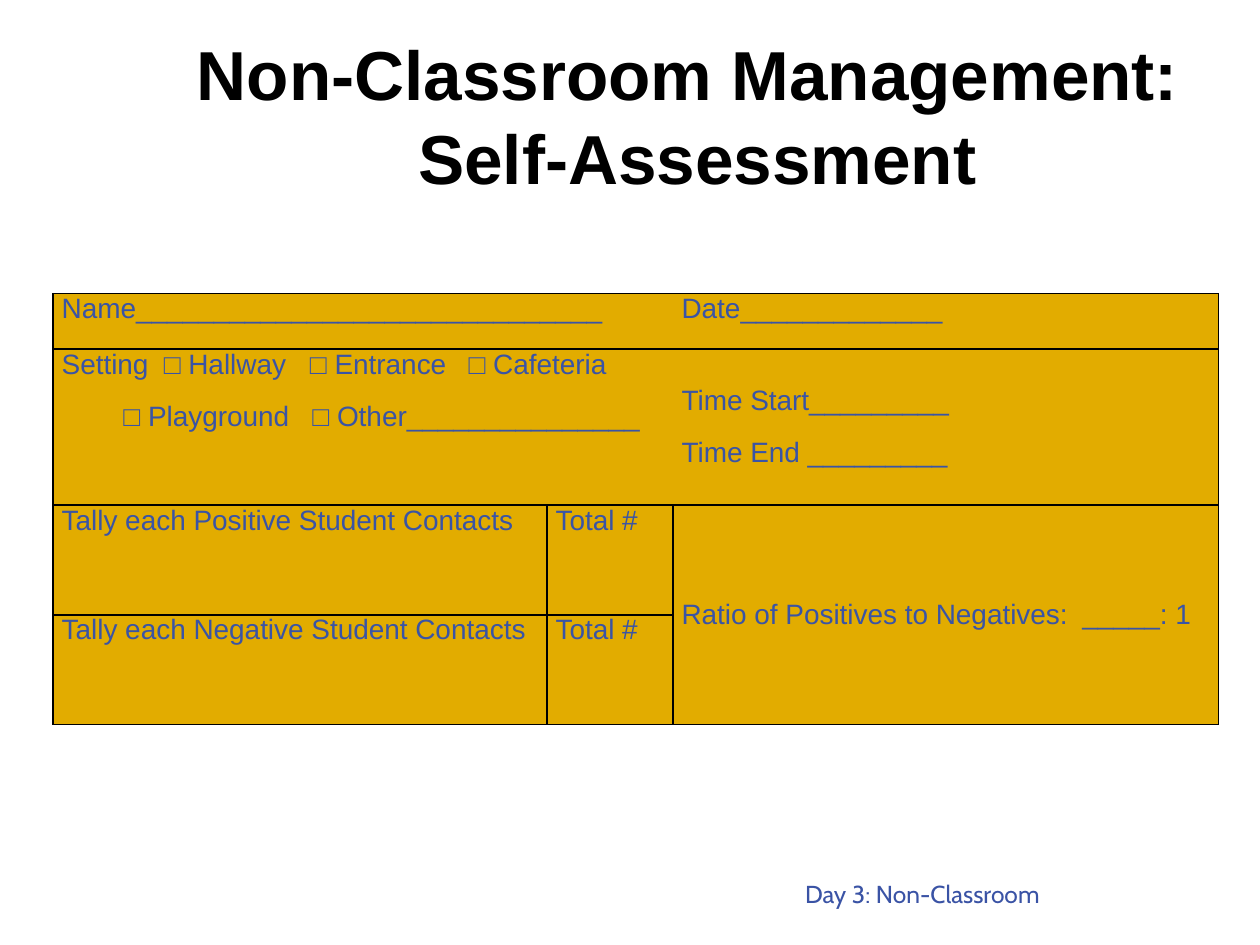
from dataclasses import dataclass

from lxml.etree import SubElement
from pptx import Presentation
from pptx.dml.color import RGBColor
from pptx.enum.text import MSO_ANCHOR, PP_ALIGN
from pptx.oxml.ns import qn
from pptx.util import Inches, Pt

COLORS = {"gold": "E2AC00", "blue": "3A54A5", "footer": "3A53A5", "black": "000000"}
COL_WIDTHS = (3.92, 1, 4.33)
ROW_HEIGHTS = (0.44, 1.24, 0.87, 0.87)
HEADER_ROWS = 2


@dataclass
class Entry:
    row: int
    col: int
    lines: tuple[str, ...]
    tabs: tuple[tuple[float, ...], ...] = ()
    span: tuple[int, int] = (1, 1)
    anchor: MSO_ANCHOR = MSO_ANCHOR.TOP


ENTRIES = (
    Entry(0, 0, ("Name" + "_" * 30,), span=(1, 2)),
    Entry(0, 2, ("Date" + "_" * 13,)),
    Entry(1, 0, ("Setting\t□ Hallway\t□ Entrance\t□ Cafeteria",
                 "\t□ Playground\t□ Other" + "_" * 15),
          tabs=((0.81, 1.97, 3.23), (0.49, 1.99)), span=(1, 2)),
    Entry(1, 2, ("Time Start" + "_" * 9, "Time End " + "_" * 9),
          anchor=MSO_ANCHOR.MIDDLE),
    Entry(2, 0, ("Tally each Positive Student Contacts",)),
    Entry(2, 1, ("Total #",)),
    Entry(2, 2, ("Ratio of Positives to Negatives:\t_____: 1",),
          tabs=((3.18,),), span=(2, 1), anchor=MSO_ANCHOR.MIDDLE),
    Entry(3, 0, ("Tally each Negative Student Contacts",)),
    Entry(3, 1, ("Total #",)),
)


def set_font(p, name: str, size: float, color: str, bold: bool = False) -> None:
    p.font.name, p.font.size, p.font.bold = name, Pt(size), bold
    p.font.color.rgb = RGBColor.from_string(COLORS[color])


def add_tabs(p, stops: tuple[float, ...]) -> None:
    tab_list = SubElement(p._p.get_or_add_pPr(), qn("a:tabLst"))
    for stop in stops:
        SubElement(tab_list, qn("a:tab"), pos=str(Inches(stop)), algn="l")


def style_cell(cell, row: int, col: int) -> None:
    """Border and fill a cell; header rows have no inner vertical lines."""
    header = row < HEADER_ROWS
    hidden = {"L": header and col > 0, "R": header and col < len(COL_WIDTHS) - 1}
    tc_pr = cell._tc.get_or_add_tcPr()
    for side in "LRTB":
        line = SubElement(tc_pr, qn(f"a:ln{side}"), w=str(Pt(1)))
        if hidden.get(side):
            SubElement(line, qn("a:noFill"))
        else:
            fill = SubElement(line, qn("a:solidFill"))
            SubElement(fill, qn("a:srgbClr"), val=COLORS["black"])
    cell.fill.solid()
    cell.fill.fore_color.rgb = RGBColor.from_string(COLORS["gold"])
    cell.margin_left = cell.margin_right = Inches(0.07)
    cell.margin_top = cell.margin_bottom = 0


def fill_entry(table, entry: Entry) -> None:
    cell = table.cell(entry.row, entry.col)
    rows, cols = entry.span
    if entry.span != (1, 1):
        cell.merge(table.cell(entry.row + rows - 1, entry.col + cols - 1))
    cell.vertical_anchor = entry.anchor
    tf = cell.text_frame
    tf.text = "\n".join(entry.lines)
    for i, p in enumerate(tf.paragraphs):
        if i:
            p.space_before = Pt(12)
        if i == len(entry.lines) - 1:
            p.space_after = Pt(6)
        if entry.tabs:
            add_tabs(p, entry.tabs[i])
        set_font(p, "Arial", 16, "blue")


def add_form(s) -> None:
    table = s.shapes.add_table(
        len(ROW_HEIGHTS), len(COL_WIDTHS), Inches(0.42), Inches(2.33),
        Inches(sum(COL_WIDTHS)), Inches(sum(ROW_HEIGHTS))).table
    table.first_row = table.horz_banding = False
    for column, width in zip(table.columns, COL_WIDTHS):
        column.width = Inches(width)
    for r, (row, height) in enumerate(zip(table.rows, ROW_HEIGHTS)):
        row.height = Inches(height)
        for c, cell in enumerate(row.cells):
            style_cell(cell, r, c)
    for entry in ENTRIES:
        fill_entry(table, entry)


def add_text(s, text: str, box: tuple[float, ...], align: PP_ALIGN, anchor: MSO_ANCHOR):
    tf = s.shapes.add_textbox(*(Inches(v) for v in box)).text_frame
    tf.word_wrap = True
    tf.vertical_anchor = anchor
    p = tf.paragraphs[0]
    p.text = text
    p.alignment = align
    return tf, p


def main() -> None:
    prs = Presentation()
    prs.slide_width, prs.slide_height = Inches(10), Inches(7.5)
    s = prs.slides.add_slide(prs.slide_layouts[6])

    _, footer = add_text(s, "Day 3: Non-Classroom", (3.63, 6.69, 4.72, 0.57),
                         PP_ALIGN.RIGHT, MSO_ANCHOR.BOTTOM)
    set_font(footer, "Cabin", 14, "footer")

    add_form(s)

    tf, title = add_text(s, "Non-Classroom Management: \vSelf-Assessment",
                         (1.07, 0.42, 8.93, 1.62), PP_ALIGN.CENTER, MSO_ANCHOR.MIDDLE)
    tf.margin_top, tf.margin_bottom = 0, Inches(0.65)
    title.line_spacing = Pt(48)
    set_font(title, "Arial", 39.6, "black", bold=True)

    prs.save("out.pptx")


if __name__ == "__main__":
    main()
